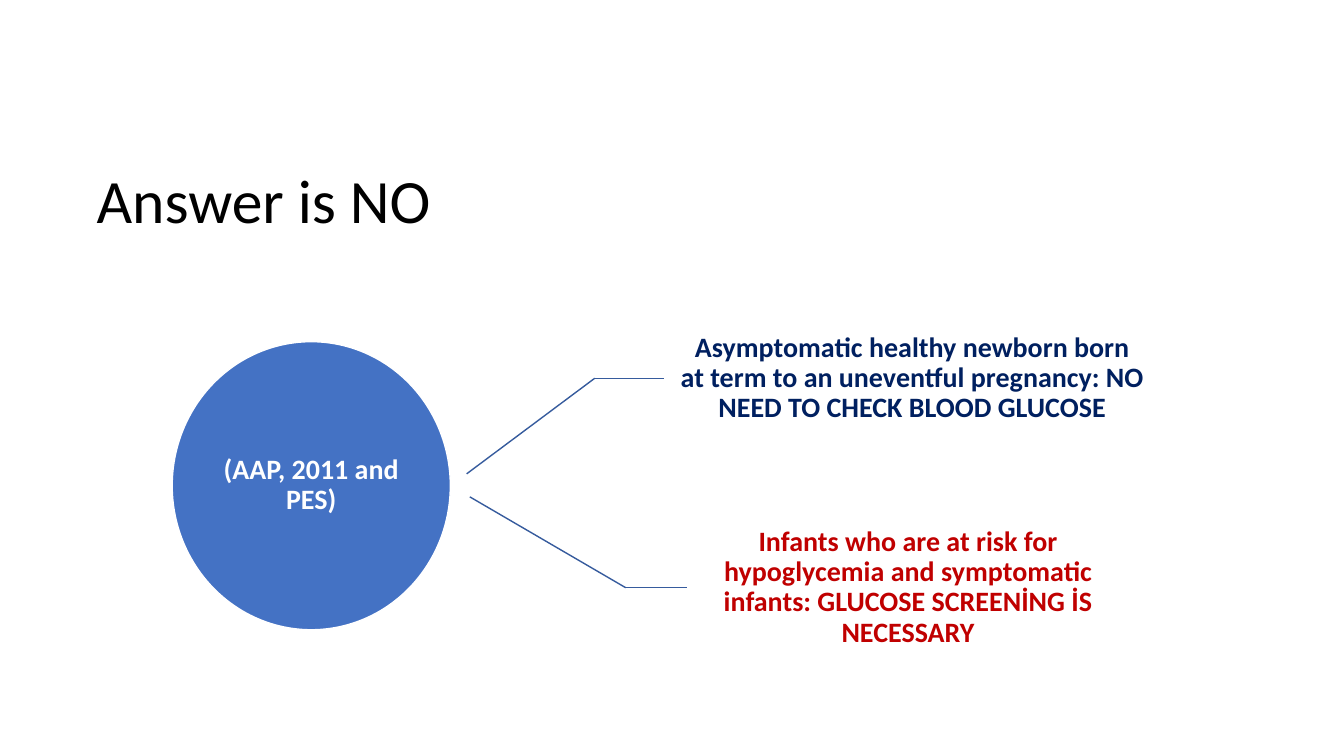
from lxml import etree
from pptx import Presentation
from pptx import util as u
from pptx.dml.color import RGBColor
from pptx.enum import shapes, text
from pptx.oxml.ns import qn


def rgb(value):
    return RGBColor.from_string(value)


class Deck:
    """Holds the style and the current slide, and draws each kind of element."""

    font = "Calibri"
    blue, line_blue, white = "4472C4", "365B9D", "FFFFFF"

    def __init__(self):
        self.prs = Presentation()
        self.prs.slide_width, self.prs.slide_height = u.Cm(33.87), u.Cm(19.05)
        self.s = self.prs.slides.add_slide(self.prs.slide_layouts[5])

    def add_words(self, sp, words, size, color, bold, align, inset=None):
        tf = sp.text_frame
        tf.word_wrap = True
        tf.auto_size = text.MSO_AUTO_SIZE.NONE
        tf.vertical_anchor = text.MSO_ANCHOR.MIDDLE
        if inset is not None:
            tf.margin_left = tf.margin_right = u.Cm(inset)
            tf.margin_top = tf.margin_bottom = u.Cm(inset)
        p = tf.paragraphs[0]
        p.alignment, p.line_spacing = align, 0.9
        r = p.add_run()
        r.text = words
        r.font.name, r.font.size, r.font.bold = self.font, u.Pt(size), bold
        r.font.color.rgb = rgb(color)

    def title(self, words, x, y, w, h):
        sp = self.s.shapes.title
        sp.left, sp.top, sp.width, sp.height = map(u.Cm, (x, y, w, h))
        self.add_words(sp, words, 44, "000000", False, text.PP_ALIGN.LEFT)

    def circle(self, words, x, y, w, h):
        sp = self.s.shapes.add_shape(
            shapes.MSO_SHAPE.OVAL, *map(u.Cm, (x, y, w, h)))
        sp.shadow.inherit = False
        sp.fill.solid()
        sp.fill.fore_color.rgb = rgb(self.blue)
        sp.line.color.rgb = rgb(self.white)
        sp.line.width = u.Pt(1)
        self.add_words(sp, words, 20, self.white, True, text.PP_ALIGN.CENTER, 0)

    def label(self, words, color, x, y, w, h):
        sp = self.s.shapes.add_textbox(*map(u.Cm, (x, y, w, h)))
        self.add_words(sp, words, 20, color, True, text.PP_ALIGN.CENTER, 0.41)

    def line(self, start, end):
        sp = self.s.shapes.add_connector(
            shapes.MSO_CONNECTOR.STRAIGHT, *map(u.Cm, start + end))
        sp.line.color.rgb = rgb(self.line_blue)
        sp.line.width = u.Pt(1)
        etree.SubElement(sp._element.spPr, qn("a:effectLst"))

    def branch(self, words, color, start, bend, end_x, w, h):
        end = (end_x, bend[1])
        self.line(start, bend)
        self.line(bend, end)
        self.label(words, color, end_x, bend[1] - h / 2, w, h)


def main():
    deck = Deck()
    deck.title("Answer is NO", 2.18, 3.3, 29.21, 3.68)
    deck.circle("(AAP, 2011 and PES)", 4.34, 8.61, 7.01, 7.26)
    deck.branch("Asymptomatic healthy newborn born at term to an uneventful "
                "pregnancy: NO NEED TO CHECK BLOOD GLUCOSE", "002060",
                (11.76, 11.94), (14.99, 9.53), 16.74, 12.5, 5.13)
    deck.branch("Infants who are at risk for hypoglycemia and symptomatic "
                "infants: GLUCOSE SCREENİNG İS NECESSARY", "C00000",
                (11.84, 12.52), (15.77, 14.81), 17.32, 11.13, 5.41)
    deck.prs.save("out.pptx")


if __name__ == "__main__":
    main()
